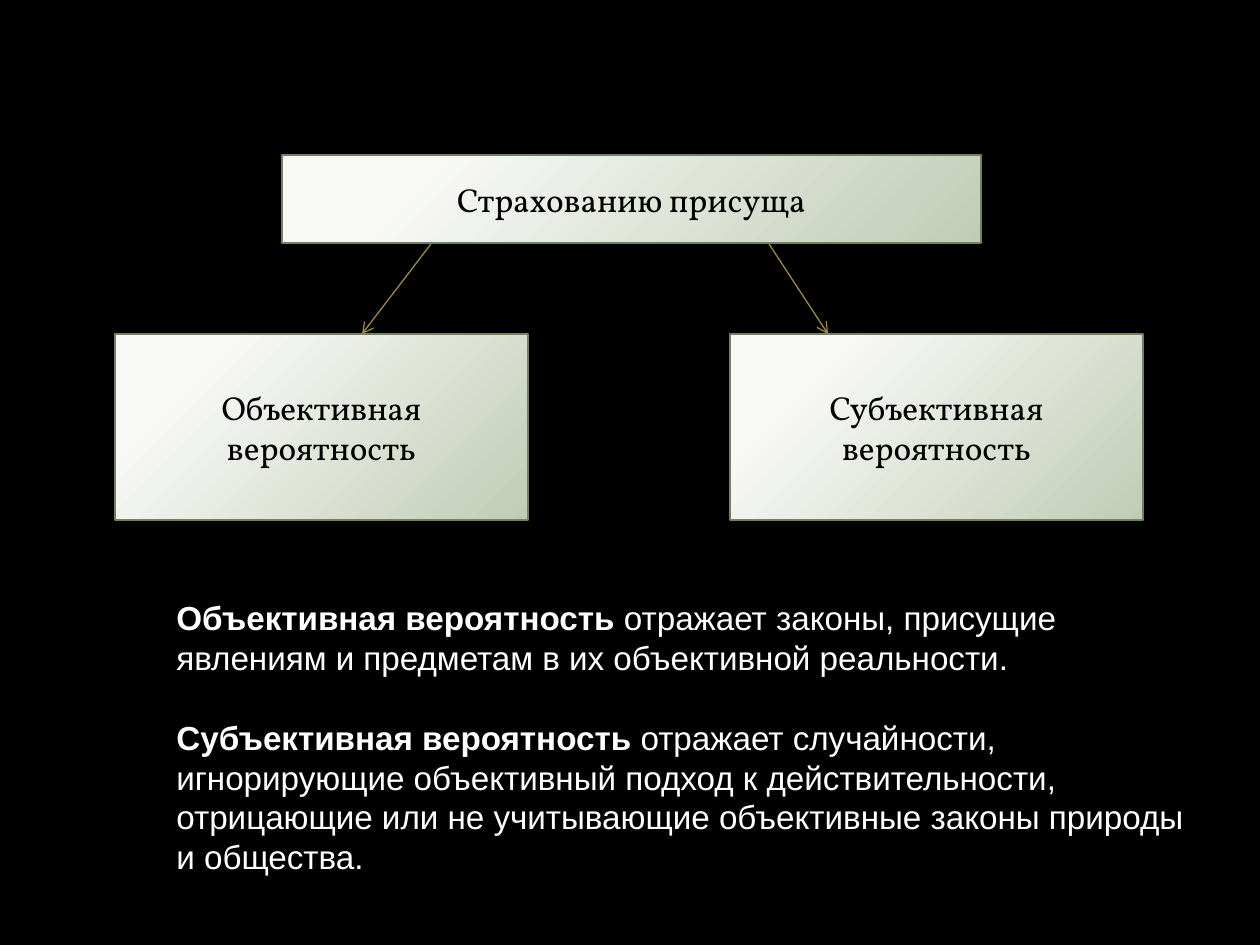
import pptx
import pptx.util
import pptx.dml.color
import pptx.enum.shapes
import pptx.enum.text
import pptx.oxml
import pptx.oxml.ns

SCALE = 914400 / 126
SPACE = pptx.oxml.ns.nsdecls("a")


def px(size):
    return pptx.util.Emu(round(size * SCALE))


def color(code):
    return pptx.dml.color.RGBColor.from_string(code)


class Board:
    size = 19
    serif = "Vollkorn"
    sans = "Arial"
    dark = "000000"
    white = "FFFFFF"
    edge = "72825E"
    gold = "998946"
    stops = ((0.2, "F8F9F7"), (1, "C1CCB5"))

    def __init__(self, deck):
        self.slide = deck.slides.add_slide(deck.slide_layouts[6])
        fill = self.slide.background.fill
        fill.solid()
        fill.fore_color.rgb = color(self.dark)

    def text(self, para, words, face, ink, bold=False):
        run = para.add_run()
        run.text = words
        font = run.font
        font.name = face
        font.size = pptx.util.Pt(self.size)
        font.bold = bold
        font.color.rgb = color(ink)

    def shade(self, shape):
        shape.fill.gradient()
        for stop, (place, code) in zip(shape.fill.gradient_stops, self.stops):
            stop.position = place
            stop.color.rgb = color(code)
        grad = shape.element.spPr.find(pptx.oxml.ns.qn("a:gradFill"))
        grad.remove(grad.find(pptx.oxml.ns.qn("a:lin")))
        grad.append(pptx.oxml.parse_xml(
            f'<a:path {SPACE} path="circle"><a:fillToRect l="-15000" t="-15000" '
            'r="115000" b="115000"/></a:path>'))

    def box(self, words, left, top, width, height):
        shape = self.slide.shapes.add_shape(
            pptx.enum.shapes.MSO_SHAPE.RECTANGLE,
            px(left), px(top), px(width), px(height))
        shape.shadow.inherit = False
        self.shade(shape)
        shape.line.color.rgb = color(self.edge)
        shape.line.width = pptx.util.Pt(0.75)
        frame = shape.text_frame
        frame.word_wrap = True
        frame.vertical_anchor = pptx.enum.text.MSO_ANCHOR.MIDDLE
        para = frame.paragraphs[0]
        para.alignment = pptx.enum.text.PP_ALIGN.CENTER
        self.text(para, words, self.serif, self.dark)

    def arrow(self, start, end):
        link = self.slide.shapes.add_connector(
            pptx.enum.shapes.MSO_CONNECTOR.STRAIGHT,
            px(start[0]), px(start[1]), px(end[0]), px(end[1]))
        link.line.color.rgb = color(self.gold)
        link.line.width = pptx.util.Pt(0.75)
        props = link.element.spPr
        props.find(pptx.oxml.ns.qn("a:ln")).append(
            pptx.oxml.parse_xml(f'<a:tailEnd {SPACE} type="arrow"/>'))
        props.append(pptx.oxml.parse_xml(f'<a:effectLst {SPACE}/>'))

    def notes(self, items, left, top, width, height):
        frame = self.slide.shapes.add_textbox(
            px(left), px(top), px(width), px(height)).text_frame
        frame.word_wrap = True
        frame.auto_size = pptx.enum.text.MSO_AUTO_SIZE.SHAPE_TO_FIT_TEXT
        for row, (term, words) in enumerate(items):
            para = frame.add_paragraph() if row else frame.paragraphs[0]
            if row:
                para.space_before = pptx.util.Pt(22.85)
            self.text(para, term, self.sans, self.white, True)
            self.text(para, words, self.sans, self.white)


def main():
    deck = pptx.Presentation()
    deck.slide_width = px(1260)
    deck.slide_height = px(945)
    board = Board(deck)
    board.notes((
        ("Объективная вероятность ",
         "отражает законы, присущие явлениям и предметам в их объективной "
         "реальности."),
        ("Субъективная вероятность ",
         "отражает случайности, игнорирующие объективный подход к "
         "действительности, отрицающие или не учитывающие объективные "
         "законы природы и общества."),
    ), 164, 591, 1052, 295)
    board.box("Страхованию присуща", 282, 155, 699, 88)
    for words, left, start, end in (
        ("Объективная вероятность", 115, 431, 362),
        ("Субъективная вероятность", 730, 769, 828),
    ):
        board.box(words, left, 334, 413, 186)
        board.arrow((start, 244), (end, 334))
    deck.save("out.pptx")


if __name__ == "__main__":
    main()
